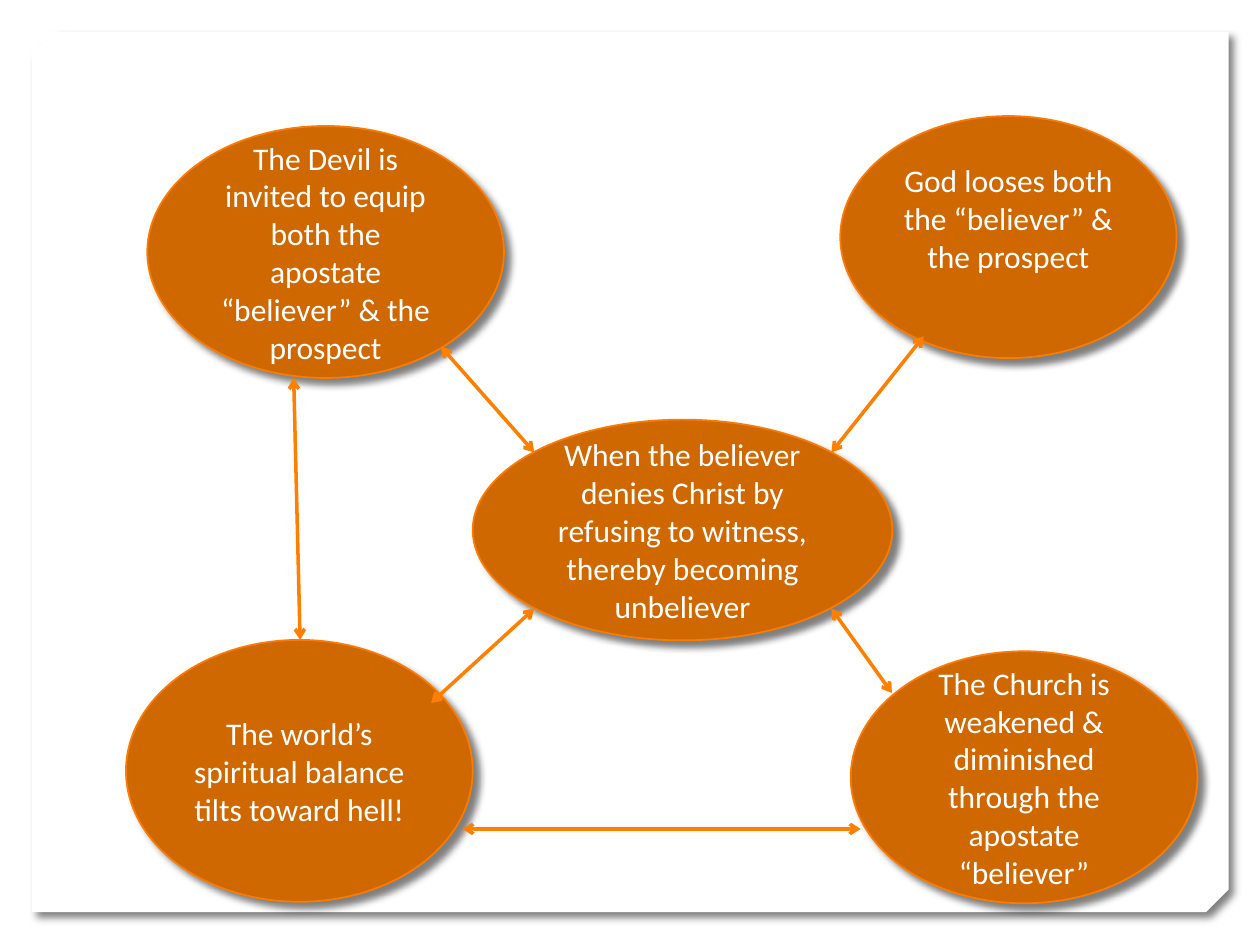
from lxml import etree
from pptx import Presentation
from pptx.dml.color import RGBColor
from pptx.enum.shapes import MSO_CONNECTOR, MSO_SHAPE
from pptx.enum.text import MSO_ANCHOR, PP_ALIGN
from pptx.oxml.ns import qn
from pptx.util import Cm, Pt

OVAL = MSO_SHAPE.OVAL
STRAIGHT = MSO_CONNECTOR.STRAIGHT
MIDDLE = MSO_ANCHOR.MIDDLE
CENTER = PP_ALIGN.CENTER


class Theme:
    card = RGBColor(0xFF, 0xFF, 0xFF)
    oval = RGBColor(0xD0, 0x68, 0x01)
    outline = RGBColor(0xFA, 0x7C, 0x00)
    arrow = RGBColor(0xFF, 0x7F, 0x01)
    text = RGBColor(0xFF, 0xFF, 0xFF)
    shadow = "000000"
    font = "Calibri"
    text_size = Pt(18)
    outline_width = Pt(1)
    arrow_width = Pt(2)


def add_shadow(shape):
    """Give a shape a soft half-transparent shadow to the lower right."""
    shape.shadow.inherit = False
    effects = shape.element.spPr.find(qn("a:effectLst"))
    shadow = etree.SubElement(
        effects, qn("a:outerShdw"), blurRad=str(Pt(4)), dist=str(Pt(5)),
        dir="2700000", algn="tl", rotWithShape="0")
    color = etree.SubElement(shadow, qn("a:srgbClr"), val=Theme.shadow)
    etree.SubElement(color, qn("a:alpha"), val="50000")


presentation = Presentation()
presentation.slide_width = Cm(25.4)
presentation.slide_height = Cm(19.05)
slide = presentation.slides.add_slide(presentation.slide_layouts[6])

# Background card with two snipped corners
left, top, right, bottom, snip = Cm(0.64), Cm(0.64), Cm(24.77), Cm(18.39), Cm(0.46)
builder = slide.shapes.build_freeform(left, bottom)
builder.add_line_segments([
    (right - snip, bottom), (right, bottom - snip), (right, top),
    (left + snip, top), (left, top + snip)], close=True)
card = builder.convert_to_shape()
card.fill.solid()
card.fill.fore_color.rgb = Theme.card
card.line.fill.background()
add_shadow(card)

# Ovals: left, top, width, height, bottom margin (cm), text
ovals = [
    (9.53, 8.46, 8.46, 4.45, 0.13,
     "When the believer denies Christ by refusing to witness, thereby becoming unbeliever"),
    (2.54, 12.9, 6.99, 5.28, 0.13,
     "The world’s spiritual balance tilts toward hell!"),
    (17.15, 13.13, 6.99, 5.08, 0.13,
     "The Church is weakened & diminished through the apostate “believer”"),
    (16.94, 2.34, 6.78, 4.88, 0.9,
     "God looses both the “believer” & the prospect"),
    (2.97, 2.54, 7.19, 5.08, 0.13,
     "The Devil is invited to equip both the apostate “believer” & the prospect"),
]
frame_format = {
    "word_wrap": True, "vertical_anchor": MIDDLE,
    "margin_left": Cm(0.25), "margin_right": Cm(0.25), "margin_top": Cm(0.13),
}
font_format = {"name": Theme.font, "size": Theme.text_size}

for *box, margin_bottom, text in ovals:
    shape = slide.shapes.add_shape(OVAL, *map(Cm, box))
    shape.fill.solid()
    shape.fill.fore_color.rgb = Theme.oval
    shape.line.color.rgb = Theme.outline
    shape.line.width = Theme.outline_width
    add_shadow(shape)
    frame = shape.text_frame
    for name, value in frame_format.items():
        setattr(frame, name, value)
    frame.margin_bottom = Cm(margin_bottom)
    paragraph = frame.paragraphs[0]
    paragraph.alignment = CENTER
    run = paragraph.add_run()
    run.text = text
    for name, value in font_format.items():
        setattr(run.font, name, value)
    run.font.color.rgb = Theme.text

# Double-headed arrows: start x, start y, end x, end y (cm)
arrows = [
    (18.62, 6.78, 16.76, 9.12),
    (5.92, 7.62, 6.05, 12.9),
    (10.77, 12.27, 8.69, 14.17),
    (16.76, 12.27, 17.98, 13.97),
    (8.89, 6.99, 10.77, 9.12),
    (17.35, 16.71, 9.32, 16.71),
]
for ends in arrows:
    arrow = slide.shapes.add_connector(STRAIGHT, *map(Cm, ends))
    arrow.line.color.rgb = Theme.arrow
    arrow.line.width = Theme.arrow_width
    properties = arrow.element.spPr
    for end in ("a:headEnd", "a:tailEnd"):
        etree.SubElement(properties.find(qn("a:ln")), qn(end), type="arrow")
    etree.SubElement(properties, qn("a:effectLst"))

presentation.save("out.pptx")
